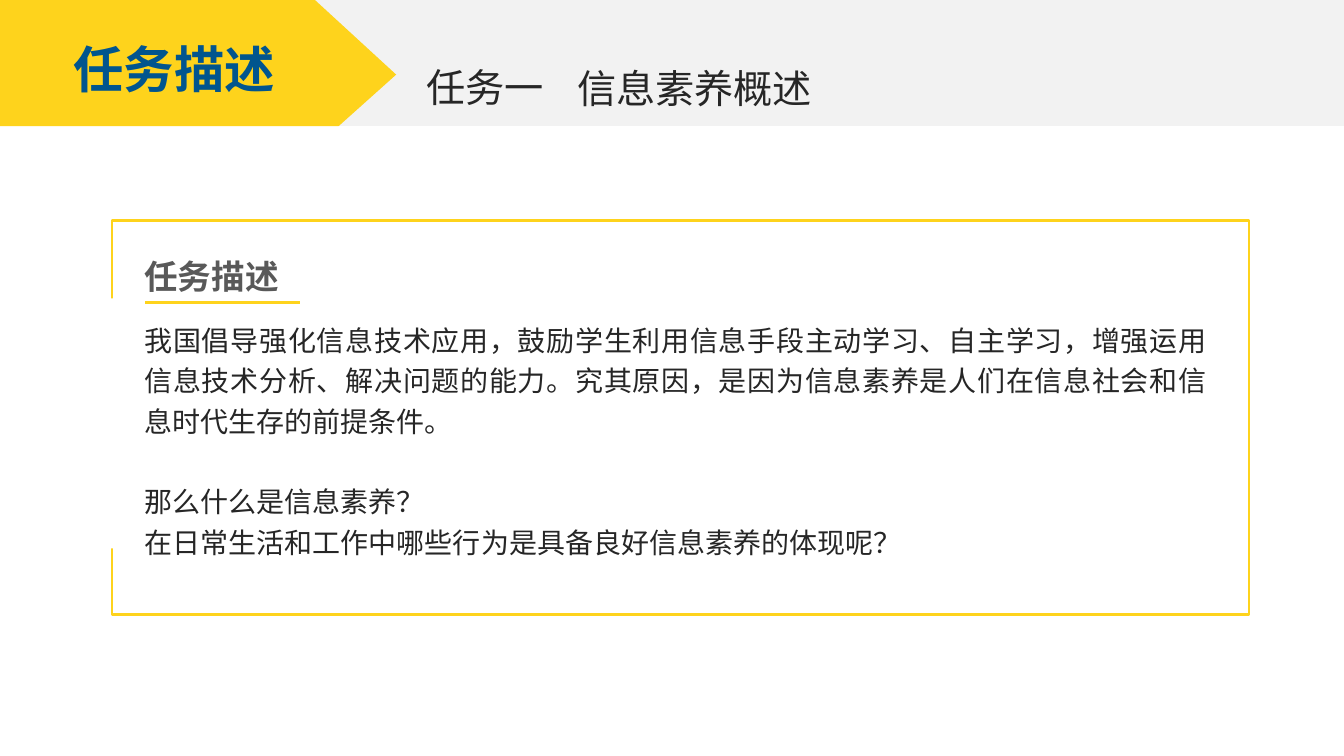
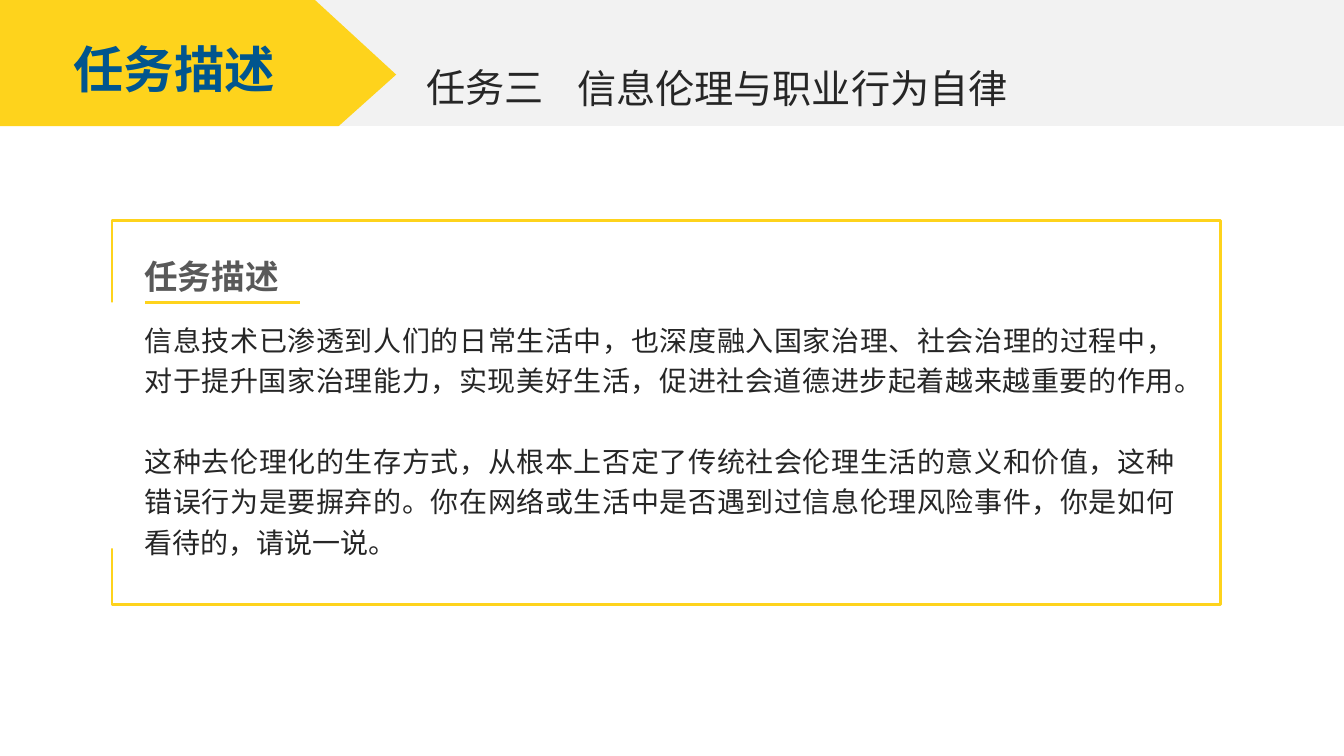
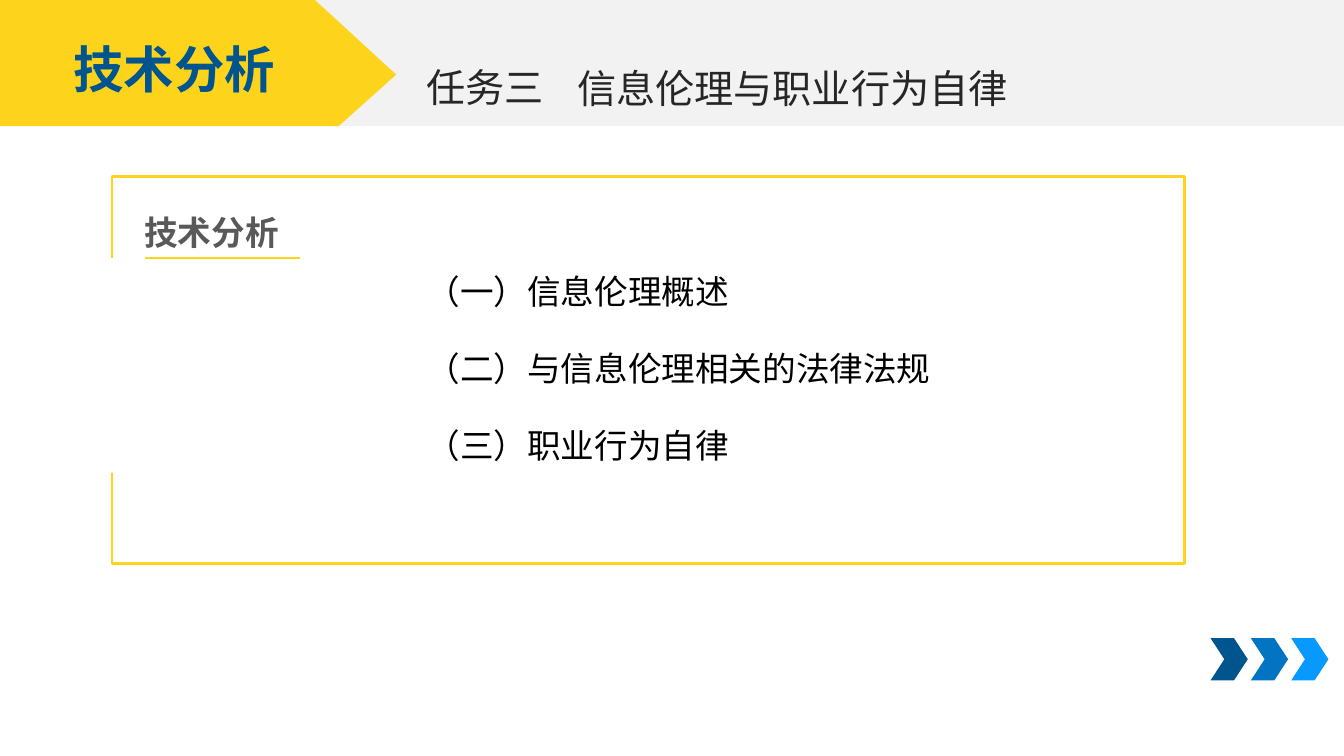
from lxml import etree
from pptx import Presentation
from pptx.dml.color import RGBColor
from pptx.enum.shapes import MSO_CONNECTOR, MSO_SHAPE
from pptx.enum.text import MSO_ANCHOR, MSO_AUTO_SIZE, PP_ALIGN
from pptx.oxml.ns import qn
from pptx.util import Pt

YELLOW = RGBColor(0xFE, 0xD3, 0x1C)
NAVY = RGBColor(0x01, 0x55, 0x8E)
BLUE = RGBColor(0x02, 0x74, 0xC2)
SKY = RGBColor(0x07, 0x99, 0xFD)
PALE = RGBColor(0xF2, 0xF2, 0xF2)
INK = RGBColor(0x26, 0x26, 0x26)
GREY = RGBColor(0x59, 0x59, 0x59)
WHITE = RGBColor(0xFF, 0xFF, 0xFF)
BLACK = RGBColor(0, 0, 0)

LATIN, CJK = "Arial", "Noto Sans CJK SC"
LEFT, CENTER, JUSTIFY = PP_ALIGN.LEFT, PP_ALIGN.CENTER, PP_ALIGN.JUSTIFY
RECT, CHEVRON = MSO_SHAPE.RECTANGLE, MSO_SHAPE.CHEVRON

SLIDE_W, SLIDE_H = 960, 540
BAND_H = 90
FRAME_X = 80


def place(sp, x, y, w, h):
    sp.left, sp.top, sp.width, sp.height = Pt(x), Pt(y), Pt(w), Pt(h)


def paint(sp, fill, line=None):
    sp.shadow.inherit = False
    sp.fill.solid()
    sp.fill.fore_color.rgb = fill
    if line is None:
        sp.line.fill.background()
    else:
        sp.line.color.rgb = line
        sp.line.width = Pt(2)


def add_block(shapes, kind, x, y, w, h, fill, line=None):
    sp = shapes.add_shape(kind, Pt(x), Pt(y), Pt(w), Pt(h))
    paint(sp, fill, line)
    return sp


def write(sp, lines, size, color, bold=False, align=LEFT, spacing=1.0,
          gaps=(), font=LATIN, wrap=True):
    """Fill a shape with plain paragraphs; gaps gives the space before each."""
    tf = sp.text_frame
    tf.text = "\n".join(lines)
    tf.word_wrap = wrap
    tf.auto_size = MSO_AUTO_SIZE.NONE
    tf.vertical_anchor = MSO_ANCHOR.TOP
    for i, p in enumerate(tf.paragraphs):
        p.alignment = align
        p.line_spacing = spacing
        p.space_before = Pt(gaps[i] if gaps else 0)
        for r in p.runs:
            r.font.size, r.font.bold, r.font.name = Pt(size), bold, font
            r.font.color.rgb = color
            rPr = r._r.get_or_add_rPr()
            rPr.set("lang", "zh-CN")
            etree.SubElement(rPr, qn("a:ea")).set("typeface", CJK)


def add_text(s, x, y, w, h, text, size, color, **style):
    sp = s.shapes.add_textbox(Pt(x), Pt(y), Pt(w), Pt(h))
    write(sp, [text], size, color, **style)


def to_front(sp):
    sp.element.getparent().append(sp.element)


def add_header(s, tag, task, topic):
    # Grey band with the yellow pointer on its left
    add_block(s.shapes, RECT, 183.6, 0, SLIDE_W - 183.6, BAND_H, PALE)
    outline = [(225, 0), (283, 53.3), (242, BAND_H), (0, BAND_H)]
    builder = s.shapes.build_freeform(0, 0)
    builder.add_line_segments([(Pt(x), Pt(y)) for x, y in outline])
    paint(builder.convert_to_shape(), YELLOW)
    # Section tag, task number and topic
    add_text(s, 44.6, 23.8, 160, 51, tag, 36, NAVY, bold=True, align=CENTER,
             font=CJK, wrap=False)
    add_text(s, 297.4, 42, 107.3, 41, task, 28, INK)
    title = s.shapes.title
    place(title, 405, 42, 507, 41)
    write(title, [topic], 28, INK)
    to_front(title)


def add_panel(s, y, w, h, gap_top, gap_h, heading):
    # Yellow frame with an opening in its left side
    add_block(s.shapes, RECT, FRAME_X, y, w, h, WHITE, YELLOW)
    add_block(s.shapes, RECT, FRAME_X - 10, y + gap_top, 26, gap_h, WHITE)
    # Underlined heading
    rule_x, rule_y = Pt(FRAME_X + 23.6), Pt(y + 58.3)
    rule = s.shapes.add_connector(MSO_CONNECTOR.STRAIGHT, rule_x, rule_y,
                                  rule_x + Pt(110.4), rule_y)
    rule.line.color.rgb = YELLOW
    rule.line.width = Pt(2)
    etree.SubElement(rule._element.spPr, qn("a:effectLst"))
    add_text(s, FRAME_X + 16, y + 15.9, 221, 39, heading, 24, GREY, bold=True,
             align=JUSTIFY, spacing=1.2)


def add_body(s, x, y, w, h, lines, size, color, **style):
    body = s.placeholders[1]
    place(body, x, y, w, h)
    write(body, lines, size, color, **style)
    for p in body.text_frame.paragraphs:
        pPr = p._p.get_or_add_pPr()
        pPr.set("marL", "0")
        pPr.set("indent", "0")
        etree.SubElement(pPr, qn("a:buNone"))
    to_front(body)


def add_chevrons(s, x, y):
    group = s.shapes.add_group_shape()
    for i, color in enumerate((NAVY, BLUE, SKY)):
        sp = add_block(group.shapes, CHEVRON, x + 28.8 * i, y, 26.6, 30.2, color)
        sp.adjustments[0] = 0.37


def new_slide(prs):
    return prs.slides.add_slide(prs.slide_layouts[1])


def task_slide(prs, task, topic, frame, gap, body_w, lines, gaps):
    s = new_slide(prs)
    y = 157.7
    add_panel(s, y, *frame, *gap, "任务描述")
    add_body(s, FRAME_X + 16, y + 65, body_w, 181.4, lines, 20, INK,
             align=JUSTIFY, spacing=1.2, gaps=gaps)
    add_header(s, "任务描述", task, topic)


def analysis_slide(prs, task, topic, lines):
    s = new_slide(prs)
    add_panel(s, 126, 766, 276.5, 58.3, 153.4, "技术分析")
    add_header(s, "技术分析", task, topic)
    add_body(s, 297.4, 190, 420, 146, lines, 24, BLACK, gaps=(0, 26, 26))
    add_chevrons(s, 864.7, 455.8)


def main():
    prs = Presentation()
    prs.slide_width, prs.slide_height = Pt(SLIDE_W), Pt(SLIDE_H)
    ethics = ("任务三", "信息伦理与职业行为自律")

    task_slide(prs, "任务一", "信息素养概述", (812.2, 281.5), (55.4, 178.6), 773.3, [
        "我国倡导强化信息技术应用，鼓励学生利用信息手段主动学习、自主学习，增强运用"
        "信息技术分析、解决问题的能力。究其原因，是因为信息素养是人们在信息社会和信"
        "息时代生存的前提条件。",
        "那么什么是信息素养？",
        "在日常生活和工作中哪些行为是具备良好信息素养的体现呢？",
    ], (0, 28.8, 0))

    task_slide(prs, *ethics, (792, 274.3), (58.3, 175.7), 750.2, [
        "信息技术已渗透到人们的日常生活中，也深度融入国家治理、社会治理的过程中，"
        "对于提升国家治理能力，实现美好生活，促进社会道德进步起着越来越重要的作用。",
        "这种去伦理化的生存方式，从根本上否定了传统社会伦理生活的意义和价值，这种"
        "错误行为是要摒弃的。你在网络或生活中是否遇到过信息伦理风险事件，你是如何"
        "看待的，请说一说。",
    ], (0, 28.8))

    analysis_slide(prs, *ethics, [
        "（一）信息伦理概述",
        "（二）与信息伦理相关的法律法规",
        "（三）职业行为自律",
    ])
    prs.save("out.pptx")


if __name__ == "__main__":
    main()
